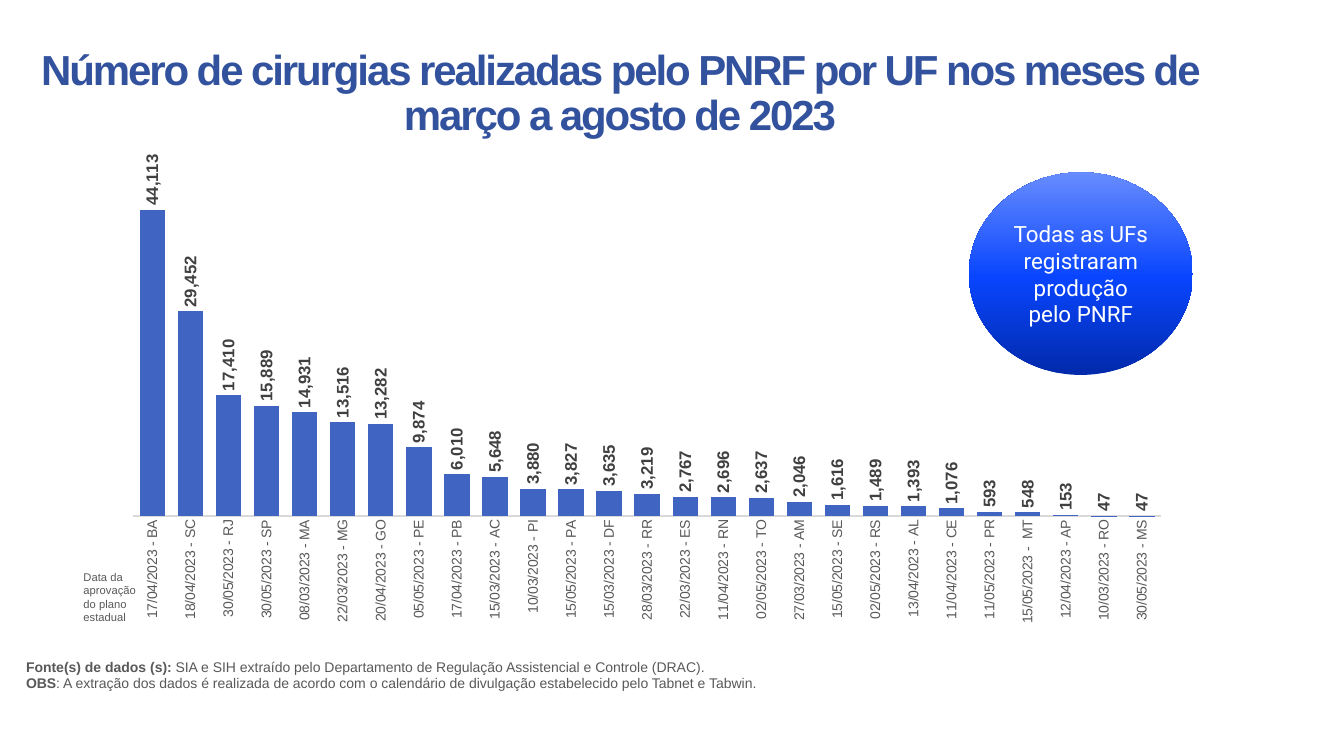
import copy

import pptx
import pptx.chart.data
import pptx.dml.color
import pptx.enum.chart
import pptx.enum.shapes
import pptx.enum.text
import pptx.util
from lxml import etree
from pptx.oxml.ns import qn
from pptx.util import Inches, Pt

COLORS = {"title": "33529E", "bar": "3F64C1", "text": "595959", "label": "404040",
          "axis": "D9D9D9", "white": "FFFFFF", "black": "000000"}
BADGE_STOPS = [(0, "012AAA"), (0.48, "0945FE"), (1, "678CFE")]

TITLE = "Número de cirurgias realizadas pelo PNRF por UF nos meses de março a agosto de 2023"
BADGE = "Todas as UFs registraram produção pelo PNRF"
DATE_NOTE = "Data da aprovação do plano estadual"
FOOTNOTES = [
    ("Fonte(s) de dados (s): ",
     "SIA e SIH extraído pelo Departamento de Regulação Assistencial e Controle (DRAC)."),
    ("OBS",
     ": A extração dos dados é realizada de acordo com o calendário de divulgação "
     "estabelecido pelo Tabnet e Tabwin."),
]
SURGERIES = [
    ("17/04/2023 - BA", 44113), ("18/04/2023 - SC", 29452), ("30/05/2023 - RJ", 17410),
    ("30/05/2023 - SP", 15889), ("08/03/2023 - MA", 14931), ("22/03/2023 - MG", 13516),
    ("20/04/2023 - GO", 13282), ("05/05/2023 - PE", 9874), ("17/04/2023 - PB", 6010),
    ("15/03/2023 - AC", 5648), ("10/03/2023 - PI", 3880), ("15/05/2023 - PA", 3827),
    ("15/03/2023 - DF", 3635), ("28/03/2023 - RR", 3219), ("22/03/2023 - ES", 2767),
    ("11/04/2023 - RN", 2696), ("02/05/2023 - TO", 2637), ("27/03/2023 - AM", 2046),
    ("15/05/2023 - SE", 1616), ("02/05/2023 - RS", 1489), ("13/04/2023 - AL", 1393),
    ("11/04/2023 - CE", 1076), ("11/05/2023 - PR", 593), ("15/05/2023 -  MT", 548),
    ("12/04/2023 - AP", 153), ("10/03/2023 - RO", 47), ("30/05/2023 - MS", 47),
]
PLOT_AREA = {"x": 0.057, "y": 0.068, "w": 0.863, "h": 0.681}


def rgb(name):
    return pptx.dml.color.RGBColor.from_string(COLORS.get(name, name))


def set_font(font, size, color, name="Arial", bold=None):
    font.size, font.name, font.bold = Pt(size), name, bold
    font.color.rgb = rgb(color)


def turn_upright(text_owner):
    """Rotate axis or data labels to read from bottom to top."""
    body = text_owner.find(qn("c:txPr")).find(qn("a:bodyPr"))
    body.set("rot", "-5400000")
    body.set("vert", "horz")


def set_plot_area(chart):
    area = chart._chartSpace.chart.plotArea
    for old in area.findall(qn("c:layout")):
        area.remove(old)
    layout = etree.Element(qn("c:layout"))
    manual = etree.SubElement(layout, qn("c:manualLayout"))
    settings = [("layoutTarget", "inner"), ("xMode", "edge"), ("yMode", "edge")]
    for tag, value in settings + list(PLOT_AREA.items()):
        etree.SubElement(manual, qn("c:" + tag)).set("val", str(value))
    area.insert(0, layout)


def add_surgery_chart(s):
    data = pptx.chart.data.CategoryChartData(number_format="#,##0")
    data.categories = [state for state, _ in SURGERIES]
    data.add_series("Series 1", [count for _, count in SURGERIES])
    chart = s.shapes.add_chart(
        pptx.enum.chart.XL_CHART_TYPE.COLUMN_CLUSTERED,
        Inches(0.65), Inches(1.33), Inches(11.81), Inches(5.06), data).chart
    set_font(chart.font, 10, "black", "Roboto")
    chart.has_legend = chart.has_title = False
    set_plot_area(chart)

    axis = chart.category_axis
    axis.major_tick_mark = pptx.enum.chart.XL_TICK_MARK.NONE
    axis.format.line.color.rgb = rgb("axis")
    axis.format.line.width = Pt(0.75)
    set_font(axis.tick_labels.font, 10, "text")
    turn_upright(axis._element)

    values = chart.value_axis
    values.visible = values.has_major_gridlines = False
    values.minimum_scale, values.maximum_scale = 0, 50000

    plot = chart.plots[0]
    plot.gap_width, plot.overlap, plot.vary_by_categories = 50, -100, False
    series = plot.series[0]
    series.format.fill.solid()
    series.format.fill.fore_color.rgb = rgb("bar")
    labels = series.data_labels
    labels.show_value = True
    labels.number_format, labels.number_format_is_linked = "#,##0", False
    labels.position = pptx.enum.chart.XL_LABEL_POSITION.OUTSIDE_END
    set_font(labels.font, 12, "label", bold=True)
    turn_upright(labels._element)


def format_title(title):
    title.left, title.top = Inches(0.16), Inches(0.54)
    title.width, title.height = Inches(11.98), Inches(0.79)
    tf = title.text_frame
    tf.text = TITLE
    tf.auto_size = pptx.enum.text.MSO_AUTO_SIZE.NONE
    tf.vertical_anchor = pptx.enum.text.MSO_ANCHOR.MIDDLE
    p = tf.paragraphs[0]
    p.alignment = pptx.enum.text.PP_ALIGN.CENTER
    p.line_spacing = 0.9
    set_font(p.font, 30, "title", bold=True)
    p.runs[0]._r.get_or_add_rPr().set("spc", "-150")


def add_note(s, left, top, width, height, size, lines):
    """Add a text box; each line is a (bold part, plain part) pair."""
    tf = s.shapes.add_textbox(Inches(left), Inches(top), Inches(width), Inches(height)).text_frame
    tf.word_wrap = True
    tf.auto_size = pptx.enum.text.MSO_AUTO_SIZE.SHAPE_TO_FIT_TEXT
    for i, (lead, rest) in enumerate(lines):
        p = tf.add_paragraph() if i else tf.paragraphs[0]
        set_font(p.font, size, "text")
        if lead:
            r = p.add_run()
            r.text, r.font.bold = lead, True
        p.add_run().text = rest


def add_badge(s):
    badge = s.shapes.add_shape(
        pptx.enum.shapes.MSO_SHAPE.FLOWCHART_CONNECTOR,
        Inches(9.61), Inches(1.71), Inches(2.22), Inches(2.01))
    badge.shadow.inherit = False
    badge.line.fill.background()
    badge.fill.gradient()
    badge.fill.gradient_angle = 90
    first = badge._element.spPr.find(".//" + qn("a:gs"))
    first.addnext(copy.deepcopy(first))
    for stop, (position, color) in zip(badge.fill.gradient_stops, BADGE_STOPS):
        stop.position, stop.color.rgb = position, rgb(color)
    tf = badge.text_frame
    tf.word_wrap = True
    tf.text = BADGE
    tf.vertical_anchor = pptx.enum.text.MSO_ANCHOR.MIDDLE
    p = tf.paragraphs[0]
    p.alignment = pptx.enum.text.PP_ALIGN.CENTER
    set_font(p.font, 16, "white", "Roboto")


def main():
    prs = pptx.Presentation()
    prs.slide_width, prs.slide_height = Inches(13.33), Inches(7.5)
    s = prs.slides.add_slide(prs.slide_layouts[5])
    add_surgery_chart(s)
    format_title(s.shapes.title)
    add_note(s, 0.73, 5.61, 0.83, 0.64, 8, [("", DATE_NOTE)])
    add_note(s, 0.16, 6.48, 7.51, 0.44, 10, FOOTNOTES)
    add_badge(s)
    prs.save("out.pptx")


if __name__ == "__main__":
    main()
